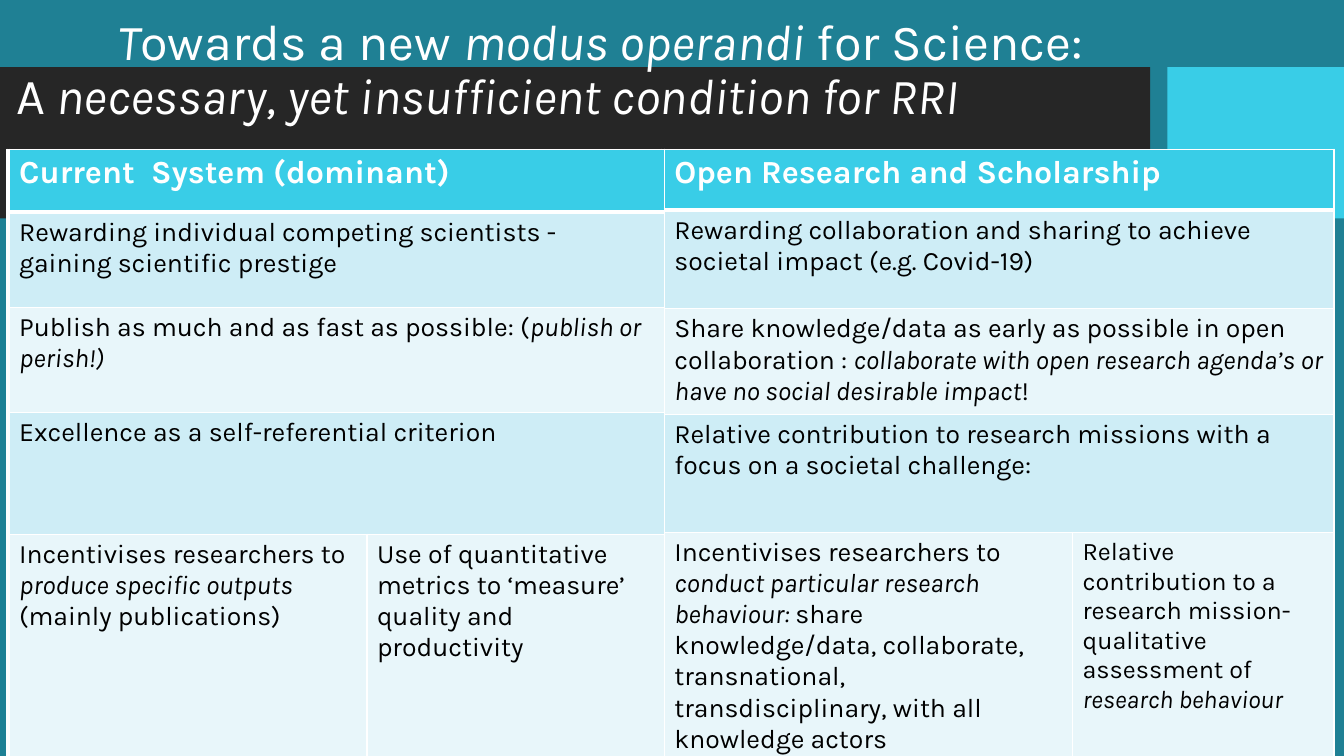
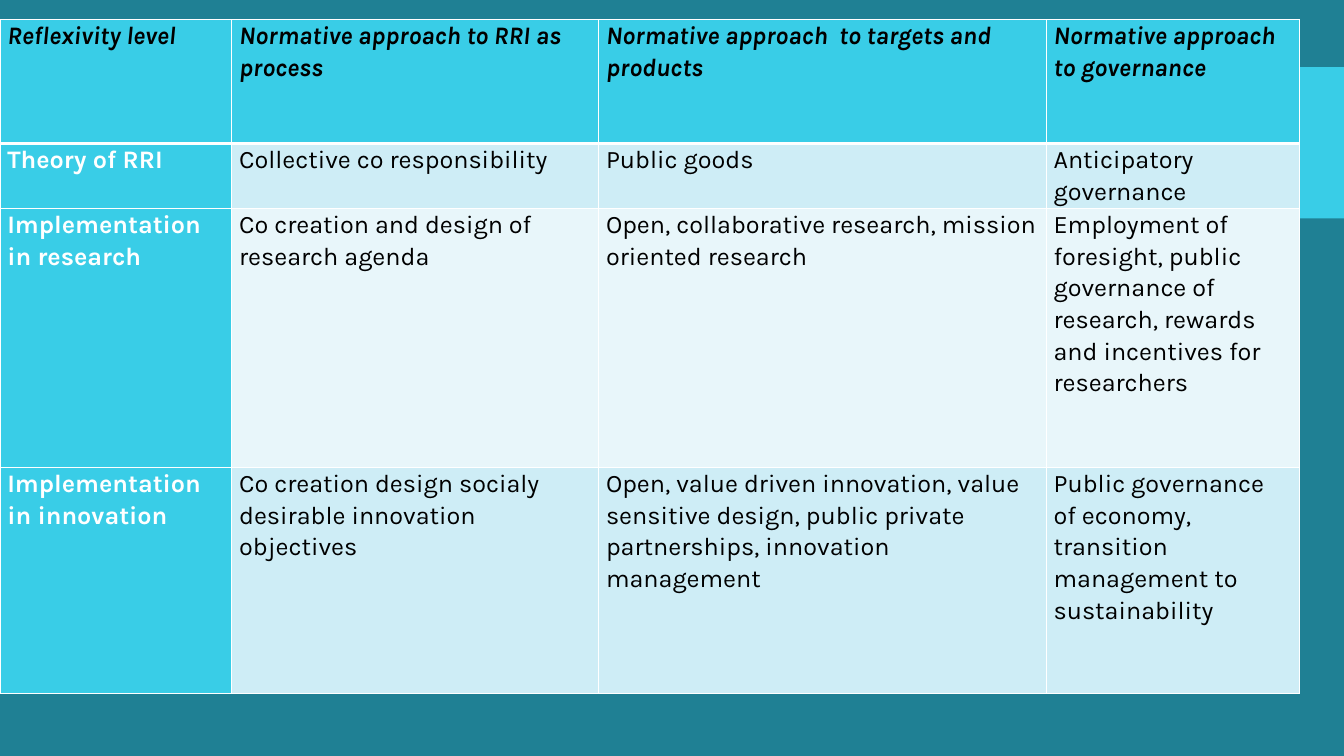
from lxml import etree
from pptx import Presentation
from pptx.dml.color import RGBColor
from pptx.enum.shapes import MSO_SHAPE as Shape
from pptx.enum.text import MSO_ANCHOR as Anchor
from pptx.oxml.ns import qn
from pptx.util import Pt

COLORS = {
    "teal": "1F8094", "dark": "262626", "cyan": "39CDE7", "white": "FFFFFF",
    "black": "000000", "band": "CEEDF6", "pale": "E8F6FA",
}
COLORS = {name: RGBColor.from_string(value) for name, value in COLORS.items()}
FONT = "Karla"
BANDS = [(0, 821.5, "dark"), (833.8, 126.2, "cyan")]

TITLE = {"size": Pt(36), "color": "white"}
HEADING = {"size": Pt(23), "bold": True, "color": "white"}
BODY = {"size": Pt(19), "bold": False, "color": "black"}
LEVEL_HEADING = {"size": Pt(18), "bold": True, "color": "black"}
LEVEL_NAME = {**LEVEL_HEADING, "color": "white"}
LEVEL_BODY = {**BODY, "size": Pt(18)}


def write(para, text, style):
    """Add runs to a paragraph; underscores switch italics on and off."""
    for index, part in enumerate(text.split("_")):
        if not part:
            continue
        span = para.add_run()
        span.text = part
        span.font.name = FONT
        span.font.italic = index % 2 == 1
        for name, value in style.items():
            if name == "color":
                span.font.color.rgb = COLORS[value]
            else:
                setattr(span.font, name, value)


def add_grid(page, left, top, widths, heights, rows, styles, margins, spacing=None, side=False):
    """Add a banded table; a row with fewer texts than columns has merged cells.

    styles holds the formats of the heading row, the first column and the rest;
    side colours the first column like the heading.
    """
    grid = page.shapes.add_table(len(heights), len(widths), Pt(left), Pt(top),
                                 Pt(sum(widths)), Pt(sum(heights))).table
    grid.first_row = grid.horz_banding = False
    for column, width in zip(grid.columns, widths):
        column.width = Pt(width)
    for row, height in zip(grid.rows, heights):
        row.height = Pt(height)

    for r in range(len(heights)):
        for c in range(len(widths)):
            cell = grid.cell(r, c)
            heading = r == 0 or (side and c == 0)
            cell.fill.solid()
            cell.fill.fore_color.rgb = COLORS["cyan" if heading else "band" if r % 2 else "pale"]
            cell.margin_left = cell.margin_right = Pt(margins[0])
            cell.margin_top = cell.margin_bottom = Pt(margins[1])
            edges = {"lnL": 1, "lnR": 1, "lnT": 3 if r == 1 else 1, "lnB": 3 if r == 0 else 1}
            properties = cell._tc.get_or_add_tcPr()
            for place, (edge, weight) in enumerate(edges.items()):
                line = etree.Element(qn("a:" + edge), w=str(Pt(weight)))
                fill = etree.SubElement(line, qn("a:solidFill"))
                etree.SubElement(fill, qn("a:srgbClr"), val=str(COLORS["white"]))
                properties.insert(place, line)

    for r, texts in enumerate(rows):
        step = len(widths) // len(texts)
        for index, text in enumerate(texts):
            cell = grid.cell(r, index * step)
            if step > 1:
                cell.merge(grid.cell(r, index * step + step - 1))
            para = cell.text_frame.paragraphs[0]
            if spacing:
                para.line_spacing, para.space_after = spacing
            write(para, text, styles[0 if r == 0 else 1 if index == 0 else 2])
    return grid


deck = Presentation()
deck.slide_width, deck.slide_height = Pt(960), Pt(540)
pages = [deck.slides.add_slide(deck.slide_layouts[6]) for _ in range(2)]
for page in pages:
    page.background.fill.solid()
    page.background.fill.fore_color.rgb = COLORS["teal"]
    for left, width, color in BANDS:
        band = page.shapes.add_shape(Shape.RECTANGLE, Pt(left), Pt(48), Pt(width), Pt(108))
        band.shadow.inherit = False
        band.fill.solid()
        band.fill.fore_color.rgb = COLORS[color]
        band.line.fill.background()
comparison, reflexivity = pages

# Slide 1: the current system beside open research
box = comparison.shapes.add_textbox(Pt(5), 0, Pt(955), Pt(101.5))
frame = box.text_frame
frame.word_wrap = True
frame.vertical_anchor = Anchor.MIDDLE
title_lines = [
    (72, "_T_owards a new _modus operandi_ for Science:"),
    (0, "A_ necessary, yet insufficient condition for RRI_"),
]
for index, (indent, text) in enumerate(title_lines):
    para = frame.add_paragraph() if index else frame.paragraphs[0]
    para.line_spacing = 0.9
    para._p.get_or_add_pPr().set("marL", str(Pt(indent)))
    write(para, text, TITLE)

current_rows = [
    ["Current  System (dominant)"],
    ["Rewarding individual competing scientists - gaining scientific prestige"],
    ["Publish as much and as fast as possible: (_publish or perish!)_"],
    ["Excellence as a self-referential criterion"],
    ["Incentivises researchers to _produce specific outputs _(mainly publications)",
     "Use of quantitative metrics to ‘measure’ quality and productivity"],
]
open_rows = [
    ["Open Research and Scholarship"],
    ["Rewarding collaboration and sharing to achieve societal impact (e.g. Covid-19)"],
    ["Share knowledge/data as early as possible in open collaboration : "
     "_collaborate with open research agenda’s or have no social desirable impact_!"],
    ["Relative contribution to research missions with a focus on a societal challenge:"],
    ["Incentivises researchers to _conduct particular research behaviour: _share "
     "knowledge/data, collaborate, transnational, transdisciplinary, with all knowledge actors",
     "Relative contribution to a research mission-qualitative assessment of _research behaviour_"],
]
backing_rows = [[""] * 2] * 4 + [[""] * 4]
grids = [
    (5, [288.7, 178.6, 322.6, 158.4], [46.8, 71.3, 71.3, 71.3, 172.1], backing_rows),
    (6.5, [255.6, 212.4], [44.6, 68.4, 74.9, 87.1, 164.2], current_rows),
    (474.5, [291.6, 186.5], [43.2, 70.6, 73.4, 84.2, 173.5], open_rows),
]
for left, widths, heights, rows in grids:
    grid = add_grid(comparison, left, 106.6, widths, heights, rows,
                    [HEADING, BODY, BODY], (7.2, 3.6))
for span in grid.cell(4, 1).text_frame.paragraphs[0].runs:
    span.font.size = Pt(18)

# Slide 2: normative approaches by reflexivity level
level_rows = [
    ["_Reflexivity level_", "_Normative approach to RRI as process_",
     "_Normative approach  to targets and products_", "_Normative approach to governance_"],
    ["Theory of RRI", "Collective co responsibility", "Public goods", "Anticipatory governance"],
    ["Implementation in research", "Co creation and design of research agenda",
     "Open, collaborative research, mission oriented research",
     "Employment of foresight, public governance of research, "
     "rewards and incentives for researchers"],
    ["Implementation in innovation", "Co creation design socialy desirable innovation objectives",
     "Open, value driven innovation, value sensitive design, "
     "public private partnerships, innovation management",
     "Public governance of economy, transition management to sustainability"],
]
add_grid(reflexivity, 0, 14, [165.6, 262.1, 319.7, 180.7], [88.6, 45.4, 185, 161.3], level_rows,
         [LEVEL_HEADING, LEVEL_NAME, LEVEL_BODY], (5.2, 0), spacing=(1.07, Pt(8)), side=True)

deck.save("out.pptx")
